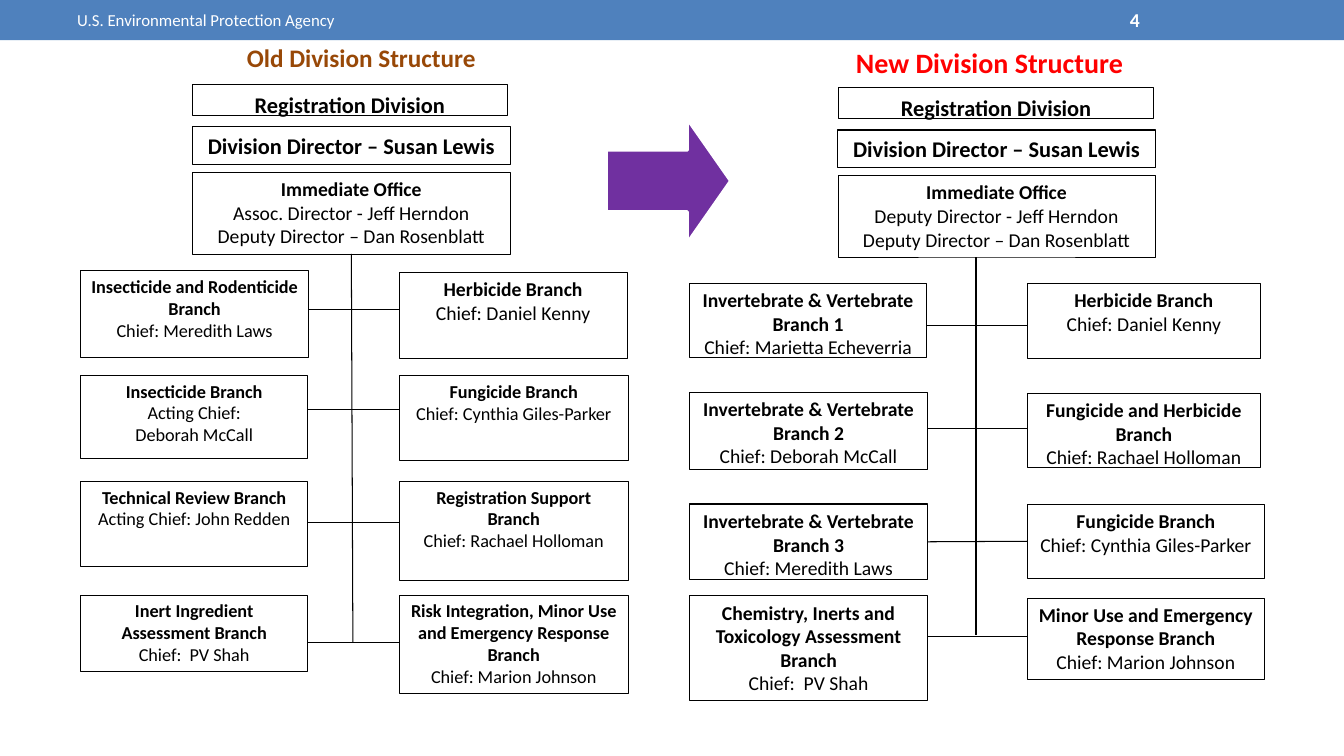
import pptx
import pptx.util
import pptx.dml.color
import pptx.enum.shapes
import pptx.enum.text
import pptx.oxml.ns
import lxml.etree

Inches, Pt = pptx.util.Inches, pptx.util.Pt
RGBColor = pptx.dml.color.RGBColor
SHAPE = pptx.enum.shapes.MSO_SHAPE
ANCHOR = pptx.enum.text.MSO_ANCHOR
ALIGN = pptx.enum.text.PP_ALIGN

BLACK = RGBColor(0x00, 0x00, 0x00)
WHITE = RGBColor(0xFF, 0xFF, 0xFF)
BLUE = RGBColor(0x4F, 0x81, 0xBD)
BROWN = RGBColor(0x98, 0x48, 0x07)
RED = RGBColor(0xFF, 0x00, 0x00)
PURPLE = RGBColor(0x70, 0x30, 0xA0)

WIDTH, HEIGHT = 13.33, 7.5
HAIR, THIN = 0.25, 0.75
SNAP = 0.01  # how near a line must be to a box's middle to be joined to it

deck = pptx.Presentation()
deck.slide_width, deck.slide_height = Inches(WIDTH), Inches(HEIGHT)
slide = deck.slides.add_slide(deck.slide_layouts[6])


def add_box(left, top, width, height, lines=(), size=14, weight=None, color=BLACK,
            fill=None, label=False):
    """Add a box with a bold first line, or a bare label without outline."""
    area = [Inches(v) for v in (left, top, width, height)]
    box = slide.shapes.add_textbox(*area) if label else slide.shapes.add_shape(SHAPE.RECTANGLE, *area)
    if not label:
        box.shadow.inherit = False
        if fill is None:
            box.fill.background()
        else:
            box.fill.solid()
            box.fill.fore_color.rgb = fill
        if weight is None:
            box.line.fill.background()
        else:
            box.line.color.rgb = BLACK
            box.line.width = Pt(weight)
    frame = box.text_frame
    frame.word_wrap = True
    frame.vertical_anchor = ANCHOR.MIDDLE if label else ANCHOR.TOP
    for i, line in enumerate(lines):
        paragraph = frame.paragraphs[0] if i == 0 else frame.add_paragraph()
        paragraph.text = line
        paragraph.alignment = ALIGN.LEFT if label else ALIGN.CENTER
        paragraph.font.name = "Calibri"
        paragraph.font.size = Pt(size)
        paragraph.font.bold = i == 0
        paragraph.font.color.rgb = color
    return box


def add_line(x1, y1, x2, y2):
    line = slide.shapes.add_connector(pptx.enum.shapes.MSO_CONNECTOR.STRAIGHT,
                                      Inches(x1), Inches(y1), Inches(x2), Inches(y2))
    line.line.color.rgb = BLACK
    line.line.width = Pt(THIN)
    lxml.etree.SubElement(line._element.spPr, pptx.oxml.ns.qn("a:effectLst"))
    return line


# Header band
add_box(0, 0, WIDTH, 0.4, fill=BLUE)
agency = add_box(WIDTH / 20, 0.02, 4.22, 0.36, ["U.S. Environmental Protection Agency"], 12,
                 color=WHITE, label=True)
agency.text_frame.paragraphs[0].font.bold = False
add_box(WIDTH * 5 / 6, 0.02, 1.56, 0.36, ["4"], 14, color=WHITE, label=True)

# Both structures; a branch is (top, width, height, text size, outline, lines)
structures = [
    dict(title="Old Division Structure", title_area=(2.35, 0.37, 2.49, 0.4), title_size=18,
         color=BROWN, office_left=1.91, office_top=0.84, division_left=1.91,
         associate="Assoc. Director - Jeff Herndon",
         columns=(0.8, 3.96), trunk=(3.48, 3.5, 6.37), rungs=(3.07, 4.06, 5.18, 6.37),
         left=[
             (2.68, 2.26, 0.86, 13, HAIR, ["Insecticide and Rodenticide Branch", "Chief: Meredith Laws"]),
             (3.72, 2.25, 0.83, 13, HAIR, ["Insecticide Branch", "Acting Chief:", "Deborah McCall"]),
             (4.77, 2.25, 0.85, 13, HAIR, ["Technical Review Branch", "Acting Chief: John Redden"]),
             (5.9, 2.25, 0.76, 13, HAIR, ["Inert Ingredient Assessment Branch", "Chief:  PV Shah"])],
         right=[
             (2.7, 2.26, 0.85, 14, HAIR, ["Herbicide Branch", "Chief: Daniel Kenny"]),
             (3.72, 2.27, 0.85, 13, HAIR, ["Fungicide Branch", "Chief: Cynthia Giles-Parker"]),
             (4.77, 2.27, 0.99, 13, HAIR, ["Registration Support Branch", "Chief: Rachael Holloman"]),
             (5.9, 2.27, 0.98, 13, HAIR, ["Risk Integration, Minor Use and Emergency Response Branch",
                                          "Chief: Marion Johnson"])]),
    dict(title="New Division Structure", title_area=(8.39, 0.4, 2.95, 0.44), title_size=20,
         color=RED, office_left=8.31, office_top=0.87, division_left=8.32,
         associate="Deputy Director - Jeff Herndon",
         columns=(6.84, 10.19), trunk=(9.68, 9.68, 6.3), rungs=(3.23, 4.25, 5.37, 6.31),
         left=[
             (2.81, 2.35, 0.74, 14, THIN, ["Invertebrate & Vertebrate Branch 1", "Chief: Marietta Echeverria"]),
             (3.89, 2.36, 0.77, 14, THIN, ["Invertebrate & Vertebrate Branch 2", "Chief: Deborah McCall"]),
             (5, 2.36, 0.75, 14, THIN, ["Invertebrate & Vertebrate Branch 3", "Chief: Meredith Laws"]),
             (5.91, 2.36, 1.04, 14, HAIR, ["Chemistry, Inerts and Toxicology Assessment Branch",
                                           "Chief:  PV Shah"])],
         right=[
             (2.81, 2.31, 0.74, 14, HAIR, ["Herbicide Branch", "Chief: Daniel Kenny"]),
             (3.9, 2.31, 0.74, 14, HAIR, ["Fungicide and Herbicide Branch", "Chief: Rachael Holloman"]),
             (5, 2.35, 0.74, 14, HAIR, ["Fungicide Branch", "Chief: Cynthia Giles-Parker"]),
             (5.93, 2.35, 0.81, 14, HAIR, ["Minor Use and Emergency Response Branch",
                                           "Chief: Marion Johnson"])]),
]

for chart in structures:
    # Title and head office
    add_box(*chart["title_area"], [chart["title"]], chart["title_size"], color=chart["color"], label=True)
    x, y = chart["office_left"], chart["office_top"]
    division = add_box(chart["division_left"], y, 3.12, 0.31, ["Registration Division"], 16, THIN, fill=WHITE)
    division.text_frame.paragraphs[0].line_spacing = 1.07
    division.text_frame.paragraphs[0].space_after = Pt(8)
    add_box(x, y + 0.42, 3.15, 0.37, ["Division Director – Susan Lewis"], 16, THIN)
    office = add_box(x, y + 0.87, 3.15, 0.81,
                     ["Immediate Office", chart["associate"], "Deputy Director – Dan Rosenblatt"], 14, HAIR)

    # Trunk below the office
    trunk_top, trunk_bottom, trunk_end = chart["trunk"]
    trunk = add_line(trunk_top, y + 1.68, trunk_bottom, trunk_end)
    if abs(trunk_top - (x + 3.15 / 2)) <= SNAP:
        trunk.begin_connect(office, 2)

    # Pairs of branches, each joined by a rung
    left_x, right_x = chart["columns"]
    for left, right, rung_y in zip(chart["left"], chart["right"], chart["rungs"]):
        pair = [add_box(column, top, width, height, lines, size, weight)
                for column, (top, width, height, size, weight, lines) in zip((left_x, right_x), (left, right))]
        rung = add_line(left_x + left[1], rung_y, right_x, rung_y)
        if abs(left[0] + left[2] / 2 - rung_y) <= SNAP:
            rung.begin_connect(pair[0], 3)
        if abs(right[0] + right[2] / 2 - rung_y) <= SNAP:
            rung.end_connect(pair[1], 1)

# Arrow from old to new
change = slide.shapes.add_shape(SHAPE.UP_ARROW, Inches(6.02), Inches(1.18), Inches(1.22), Inches(1.23))
change.rotation = 90
change.adjustments[0], change.adjustments[1] = 0.5, 0.35
change.shadow.inherit = False
change.fill.solid()
change.fill.fore_color.rgb = PURPLE
change.line.color.rgb = WHITE
change.line.width = Pt(2.08)

deck.save("out.pptx")
